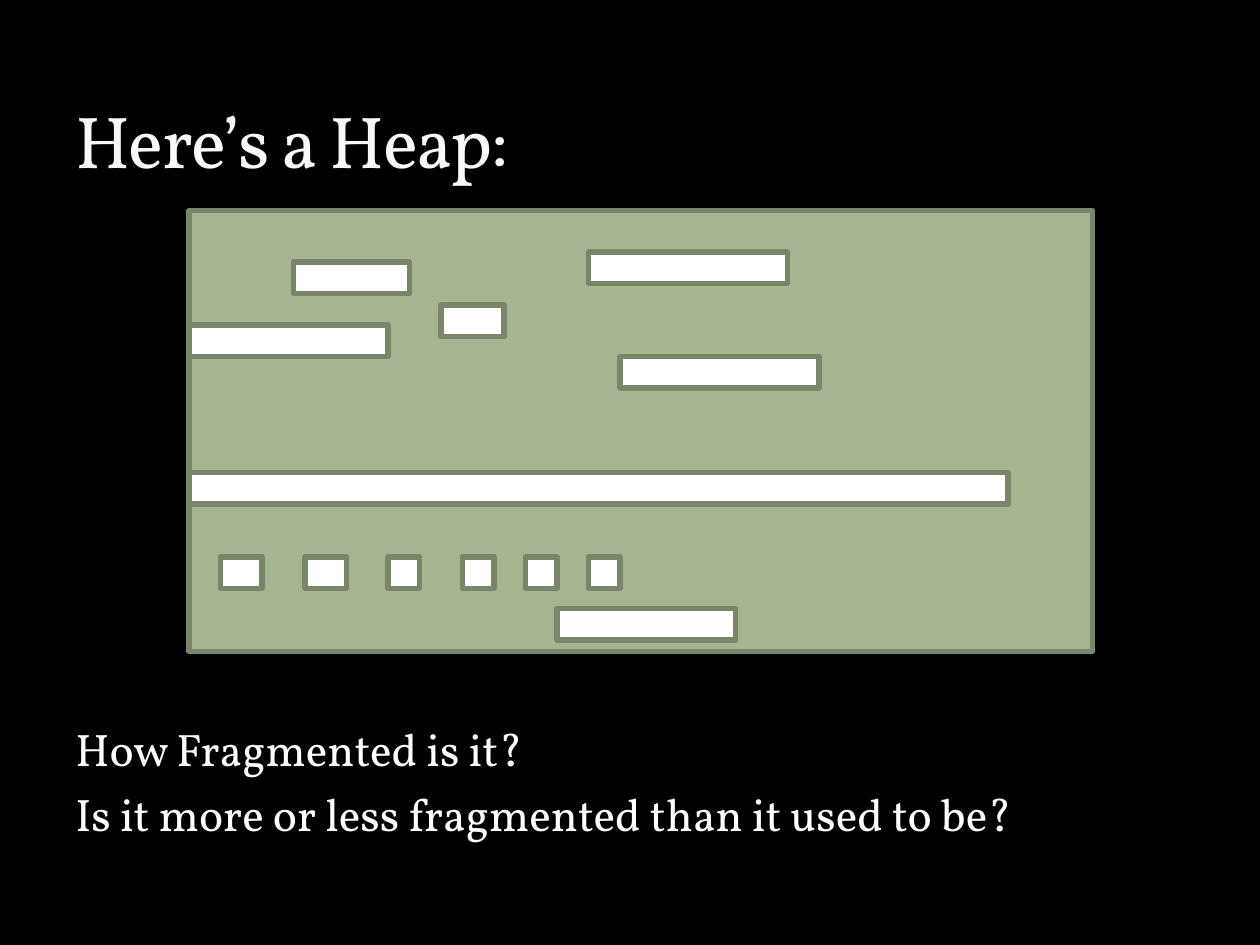
import pptx
import pptx.dml.color
import pptx.enum.shapes
import pptx.enum.text
import pptx.util
from pptx.util import Inches


def color(hex_string):
    return pptx.dml.color.RGBColor.from_string(hex_string)


class HeapSlide:
    font = "Vollkorn"
    border = "7A866C"
    border_width = 3

    def __init__(self, presentation, background):
        self.slide = presentation.slides.add_slide(presentation.slide_layouts[6])
        fill = self.slide.background.fill
        fill.solid()
        fill.fore_color.rgb = color(background)

    def text(self, left, top, width, height, lines, size, text_color,
             anchor=pptx.enum.text.MSO_ANCHOR.TOP, space_before=0, hanging=0, spacing=0):
        shape = self.slide.shapes.add_textbox(
            Inches(left), Inches(top), Inches(width), Inches(height))
        frame = shape.text_frame
        frame.word_wrap = True
        frame.vertical_anchor = anchor
        frame.text = "\n".join(lines)
        for paragraph in frame.paragraphs:
            paragraph.space_before = pptx.util.Pt(space_before)
            if hanging:
                properties = paragraph._p.get_or_add_pPr()
                properties.set("marL", str(Inches(hanging)))
                properties.set("indent", str(-Inches(hanging)))
            for run in paragraph.runs:
                run.font.name = self.font
                run.font.size = pptx.util.Pt(size)
                run.font.color.rgb = color(text_color)
                if spacing:
                    run.font._element.set("spc", str(spacing * 100))

    def block(self, left, top, width, height, fill):
        shape = self.slide.shapes.add_shape(
            pptx.enum.shapes.MSO_SHAPE.RECTANGLE,
            Inches(left), Inches(top), Inches(width), Inches(height))
        shape.shadow.inherit = False
        shape.fill.solid()
        shape.fill.fore_color.rgb = color(fill)
        shape.line.color.rgb = color(self.border)
        shape.line.width = pptx.util.Pt(self.border_width)


def main():
    presentation = pptx.Presentation()
    presentation.slide_width = Inches(10)
    presentation.slide_height = Inches(7.5)
    heap = HeapSlide(presentation, "000000")

    # Questions and title
    heap.text(0.5, 5.67, 9, 1.23,
              ["How Fragmented is it?",
               "Is it more or less fragmented than it used to be?"],
              26, "FFFFFF", space_before=6, hanging=0.3)
    heap.text(0.5, 0.17, 9, 1.33, ["Here’s a Heap:"], 42, "F9F9F9",
              anchor=pptx.enum.text.MSO_ANCHOR.BOTTOM, spacing=-1)

    # Heap area
    heap.block(1.5, 1.67, 7.17, 3.5, "A5B592")

    # Blocks in the heap: left, top, width
    small_row = 4.42
    blocks = [
        (2.33, 2.08, 0.92), (4.67, 2, 1.58), (1.5, 2.58, 1.58),
        (3.5, 2.42, 0.5), (4.92, 2.83, 1.58), (1.5, 3.75, 6.5),
        (1.75, small_row, 0.33), (2.42, small_row, 0.33),
        (3.08, small_row, 0.25), (3.67, small_row, 0.25),
        (4.17, small_row, 0.25), (4.67, small_row, 0.25),
        (4.42, 4.83, 1.42),
    ]
    for left, top, width in blocks:
        heap.block(left, top, width, 0.25, "FFFFFF")

    presentation.save("out.pptx")


if __name__ == "__main__":
    main()
